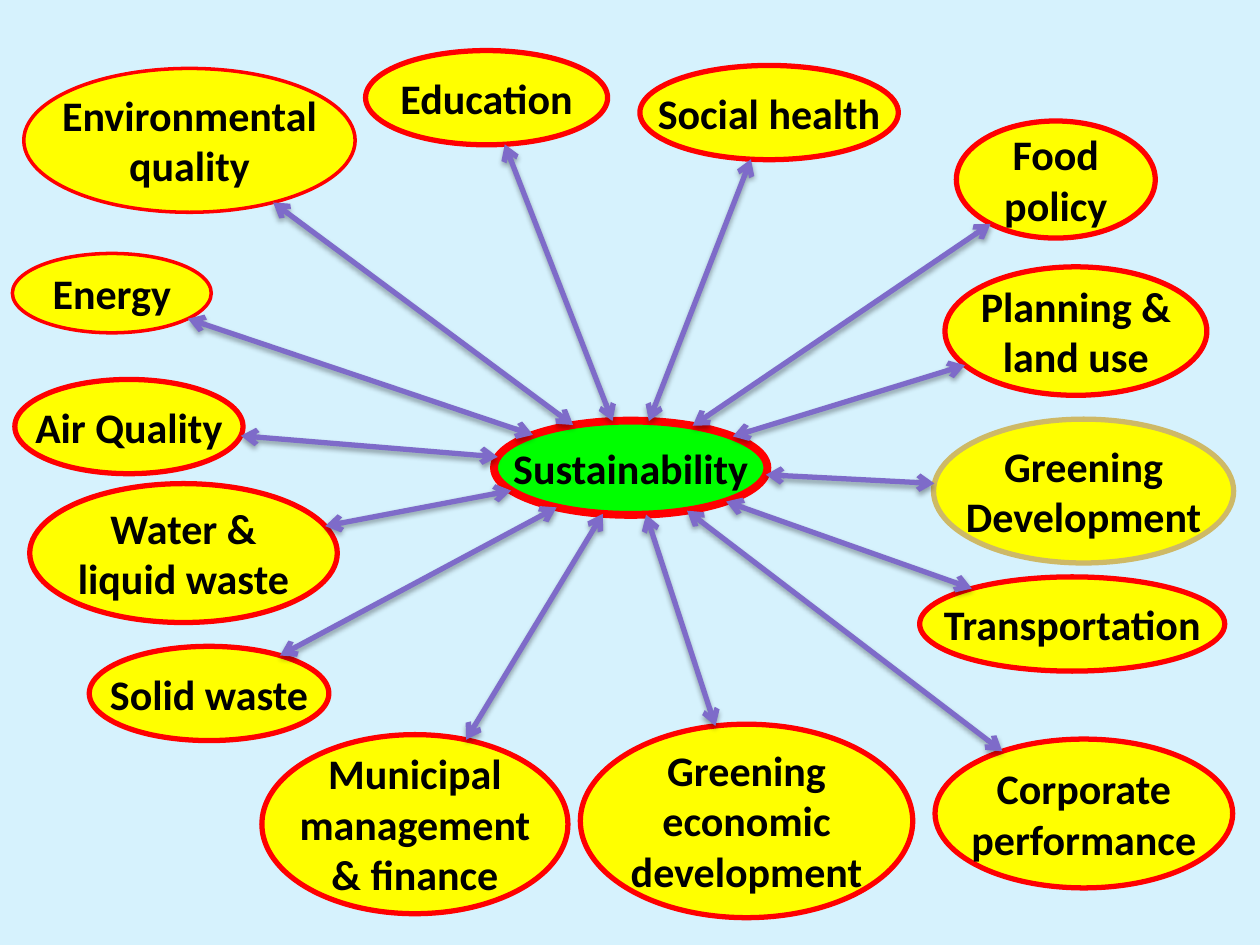
from dataclasses import dataclass
from math import hypot

from lxml.etree import SubElement
from pptx import Presentation
from pptx.dml.color import RGBColor
from pptx.enum.shapes import MSO_CONNECTOR, MSO_SHAPE
from pptx.enum.text import MSO_AUTO_SIZE, PP_ALIGN
from pptx.oxml.ns import qn
from pptx.slide import Slide
from pptx.util import Cm, Pt


@dataclass(frozen=True)
class Theme:
    background: str = "D6F2FD"
    topic: str = "FFFF00"
    centre: str = "00FF00"
    outline: str = "FF0000"
    muted_outline: str = "CEB966"
    arrow: str = "7E6BC9"
    text: str = "000000"
    font: str = "Calibri"
    size: float = 24
    thin: float = 2
    medium: float = 3
    thick: float = 4.5


THEME = Theme()


@dataclass(frozen=True)
class Topic:
    """A labelled oval; lengths are in centimetres."""
    lines: tuple[str, ...]
    left: float
    top: float
    width: float
    height: float
    fill: str = THEME.topic
    outline: str = THEME.outline
    weight: float = THEME.medium

    @property
    def middle(self) -> tuple[float, float]:
        return self.left + self.width / 2, self.top + self.height / 2

    def edge_towards(self, other: "Topic") -> tuple[float, float]:
        """Return where the line to the other oval's middle leaves this oval."""
        x, y = self.middle
        other_x, other_y = other.middle
        dx, dy = other_x - x, other_y - y
        scale = 1 / hypot(dx / (self.width / 2), dy / (self.height / 2))
        return x + dx * scale, y + dy * scale


CENTRE = Topic(("Sustainability",), 9.96, 8.48, 5.51, 1.9,
               fill=THEME.centre, weight=THEME.thick)

TOPICS = [
    Topic(("Energy",), 0.25, 5.11, 4.01, 1.6, weight=THEME.thin),
    Topic(("Environmental", "quality"), 0.48, 1.38, 6.68, 2.9, weight=THEME.thin),
    Topic(("Air Quality",), 0.3, 7.65, 4.6, 1.9),
    Topic(("Education",), 7.37, 1.02, 4.88, 1.9),
    Topic(("Water &", "liquid waste"), 0.6, 9.75, 6.2, 2.8),
    Topic(("Solid waste",), 1.8, 13.03, 4.83, 1.9),
    Topic(("Municipal", "management", "& finance"), 5.28, 14.81, 6.17, 3.61),
    Topic(("Greening", "economic", "development"), 11.7, 14.6, 6.7, 3.9),
    Topic(("Social health",), 12.9, 1.32, 5.21, 1.9),
    Topic(("Food", "policy"), 19.28, 2.44, 4.01, 2.36),
    Topic(("Planning &", "land use"), 19.05, 5.38, 5.28, 2.59),
    Topic(("Greening", "Development"), 18.82, 8.45, 6.05, 2.9,
          outline=THEME.muted_outline),
    Topic(("Transportation",), 18.54, 11.63, 6.15, 1.9),
    Topic(("Corporate", "performance"), 18.85, 14.9, 6, 3),
]


def rgb(value: str) -> RGBColor:
    return RGBColor.from_string(value)


def draw_oval(slide: Slide, topic: Topic) -> None:
    shape = slide.shapes.add_shape(
        MSO_SHAPE.OVAL,
        Cm(topic.left), Cm(topic.top), Cm(topic.width), Cm(topic.height))
    shape.shadow.inherit = False
    shape.fill.solid()
    shape.fill.fore_color.rgb = rgb(topic.fill)
    shape.line.color.rgb = rgb(topic.outline)
    shape.line.width = Pt(topic.weight)


def draw_label(slide: Slide, topic: Topic) -> None:
    """Write one paragraph per line, centred on the oval."""
    height = 0.24 + 1.03 * len(topic.lines)
    top = topic.middle[1] - height / 2
    box = slide.shapes.add_textbox(
        Cm(topic.left), Cm(top), Cm(topic.width), Cm(height))
    frame = box.text_frame
    frame.word_wrap = False
    frame.auto_size = MSO_AUTO_SIZE.SHAPE_TO_FIT_TEXT
    for index, line in enumerate(topic.lines):
        para = frame.add_paragraph() if index else frame.paragraphs[0]
        para.alignment = PP_ALIGN.CENTER
        span = para.add_run()
        span.text = line
        span.font.name = THEME.font
        span.font.size = Pt(THEME.size)
        span.font.bold = True
        span.font.color.rgb = rgb(THEME.text)


def draw_arrow(slide: Slide, topic: Topic, centre: Topic) -> None:
    """Join two ovals, edge to edge, with a double-headed shadowed line."""
    x1, y1 = topic.edge_towards(centre)
    x2, y2 = centre.edge_towards(topic)
    connector = slide.shapes.add_connector(
        MSO_CONNECTOR.STRAIGHT, Cm(x1), Cm(y1), Cm(x2), Cm(y2))
    connector.line.color.rgb = rgb(THEME.arrow)
    connector.line.width = Pt(THEME.medium)
    properties = connector.element.spPr
    outline = properties.find(qn("a:ln"))
    for end in ("a:headEnd", "a:tailEnd"):
        SubElement(outline, qn(end), type="arrow")
    effects = SubElement(properties, qn("a:effectLst"))
    shadow = SubElement(effects, qn("a:outerShdw"), blurRad=str(Pt(3.1)),
                        dist=str(Pt(1.8)), dir="5400000", rotWithShape="0")
    color = SubElement(shadow, qn("a:srgbClr"), val="000000")
    SubElement(color, qn("a:alpha"), val="35000")


def main() -> None:
    deck = Presentation()
    deck.slide_width, deck.slide_height = Cm(25.4), Cm(19.05)
    page = deck.slides.add_slide(deck.slide_layouts[6])
    page.background.fill.solid()
    page.background.fill.fore_color.rgb = rgb(THEME.background)

    for topic in [*TOPICS, CENTRE]:
        draw_oval(page, topic)
        draw_label(page, topic)
    for topic in TOPICS:
        draw_arrow(page, topic, CENTRE)

    deck.save("out.pptx")


if __name__ == "__main__":
    main()
